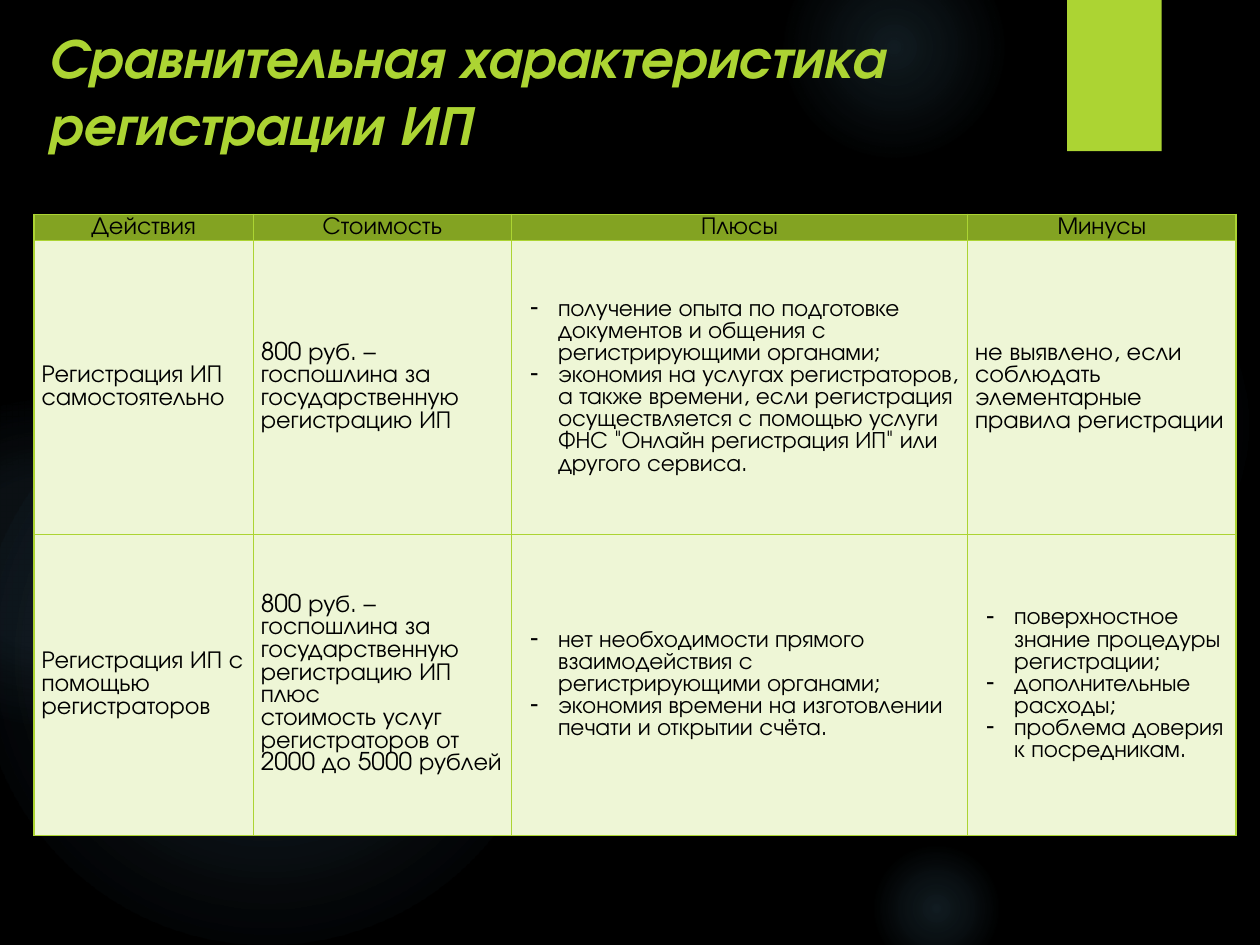
from lxml import etree
from pptx import Presentation
from pptx import util as u
from pptx.dml.color import RGBColor
from pptx.enum import shapes, text
from pptx.oxml import ns

FONT = "TeX Gyre Adventor"
BLACK = RGBColor(0x00, 0x00, 0x00)
LIME = RGBColor(0xAC, 0xD4, 0x33)
OLIVE = RGBColor(0x83, 0xA3, 0x22)
PALE = RGBColor(0xEE, 0xF6, 0xD6)
GLOW = RGBColor(0x7A, 0xC4, 0xF0)

# left, top, diameter in grid units; opacity at centre and at 36 %, end of the glow
GLOWS = [
    (6.89, 1.83, 3.08, 7, 6, 69),
    (6.22, -0.5, 1.75, 14, 7, 73),
    (6.89, 6.67, 1.08, 14, 7, 66),
    (-0.17, 2.92, 4.58, 11, 10, 75),
    (-0.92, 3.17, 2.58, 8, 8, 72),
]
COLUMNS = [1.74, 2.05, 3.62, 2.13]
ROWS = [0.21, 2.33, 2.39]
STATE_FEE = "800 руб. – госпошлина за государственную регистрацию ИП"
# Each cell is a list of paragraphs; a leading "- " marks a list item
CELLS = [
    [["Действия"], ["Стоимость"], ["Плюсы"], ["Минусы"]],
    [
        ["Регистрация ИП самостоятельно"],
        [STATE_FEE],
        ["- получение опыта по подготовке документов и общения с "
         "регистрирующими органами;",
         "- экономия на услугах регистраторов, а также времени, если регистрация "
         "осуществляется с помощью услуги ФНС \"Онлайн регистрация ИП\" "
         "или другого сервиса."],
        ["не выявлено, если соблюдать элементарные правила регистрации"],
    ],
    [
        ["Регистрация ИП с помощью регистраторов"],
        [STATE_FEE, "плюс", "стоимость услуг регистраторов от 2000 до 5000 рублей"],
        ["- нет необходимости прямого взаимодействия с регистрирующими органами;",
         "- экономия времени на изготовлении печати и открытии счёта."],
        ["- поверхностное знание процедуры регистрации;",
         "- дополнительные расходы;",
         "- проблема доверия к посредникам."],
    ],
]

deck = Presentation()
deck.slide_width, deck.slide_height = u.Inches(10), u.Inches(7.5)
UNIT = deck.slide_width // 10  # the page is a grid of 10 by 7.5 square units


def grid(*lengths):
    return [round(length * UNIT) for length in lengths]


def add_xml(parent, markup):
    """Append DrawingML markup, written with the a: prefix, to an element."""
    name, rest = markup[1:].split(" ", 1)
    parent.append(etree.fromstring(f"<{name} {ns.nsdecls('a')} {rest}"))


page = deck.slides.add_slide(deck.slide_layouts[5])
page.background.fill.solid()
page.background.fill.fore_color.rgb = BLACK

# Backdrop: soft glows and the lime tab
for left, top, size, centre, middle, end in GLOWS:
    glow = page.shapes.add_shape(shapes.MSO_SHAPE.OVAL, *grid(left, top, size, size))
    glow.shadow.inherit = False
    glow.line.fill.background()
    glow.fill.gradient()
    gradient = glow.element.spPr.find(ns.qn("a:gradFill"))
    for child in list(gradient):
        gradient.remove(child)
    stops = "".join(
        f'<a:gs pos="{place * 1000}"><a:srgbClr val="{GLOW}">'
        f'<a:alpha val="{opacity * 1000}"/></a:srgbClr></a:gs>'
        for place, opacity in [(0, centre), (36, middle), (end, 0)])
    add_xml(gradient, f'<a:gsLst >{stops}</a:gsLst>')
    add_xml(gradient, '<a:path path="circle">'
                      '<a:fillToRect l="50000" t="50000" r="50000" b="50000"/></a:path>')

tab = page.shapes.add_shape(shapes.MSO_SHAPE.RECTANGLE, *grid(8.47, 0, 0.75, 1.2))
tab.shadow.inherit = False
tab.fill.solid()
tab.fill.fore_color.rgb = LIME
tab.line.fill.background()

# Title, brought in front of the backdrop
title = page.shapes.title
page.shapes.element.append(title.element)
title.left, title.top, title.width, title.height = grid(0.28, 0.13, 9, 0.95)
title.text_frame.text = "Сравнительная характеристика регистрации ИП"
title.text_frame.word_wrap = True
title.text_frame.auto_size = text.MSO_AUTO_SIZE.NONE
title.text_frame.vertical_anchor = text.MSO_ANCHOR.TOP
para = title.text_frame.paragraphs[0]
para.alignment = text.PP_ALIGN.LEFT
para.font.name, para.font.size = FONT, u.Pt(32)
para.font.bold = para.font.italic = True
para.font.color.rgb = LIME

# Comparison table
table = page.shapes.add_table(
    len(ROWS), len(COLUMNS), *grid(0.27, 1.7, sum(COLUMNS), sum(ROWS))).table
table.horz_banding = table.first_row = False
for column, width in zip(table.columns, grid(*COLUMNS)):
    column.width = width
for row, height in zip(table.rows, grid(*ROWS)):
    row.height = height

for r, row in enumerate(CELLS):
    for c, lines in enumerate(row):
        cell = table.cell(r, c)
        cell.margin_left = cell.margin_right = u.Inches(0.06)
        cell.margin_top = cell.margin_bottom = 0
        cell.vertical_anchor = text.MSO_ANCHOR.MIDDLE
        for side in "LRTB":
            add_xml(cell._tc.tcPr,
                    f'<a:ln{side} w="{u.Pt(0.75)}"><a:solidFill>'
                    f'<a:srgbClr val="{LIME}"/></a:solidFill></a:ln{side}>')
        cell.fill.solid()
        cell.fill.fore_color.rgb = PALE if r else OLIVE

        cell.text_frame.text = "\n".join(line.removeprefix("- ") for line in lines)
        for para, line in zip(cell.text_frame.paragraphs, lines):
            listed = line.startswith("- ")
            para.alignment = text.PP_ALIGN.LEFT if r else text.PP_ALIGN.CENTER
            para.font.name = FONT
            para.font.size = u.Pt(13.5 if listed else 14)
            para.font.bold = False
            para.font.color.rgb = BLACK
            if listed:
                props = para._p.get_or_add_pPr()
                props.set("marL", str(u.Inches(0.31)))
                props.set("indent", str(u.Inches(-0.22)))
                bullet = etree.Element(ns.qn("a:buChar"), char="-")
                props.find(ns.qn("a:defRPr")).addprevious(bullet)

deck.save("out.pptx")
